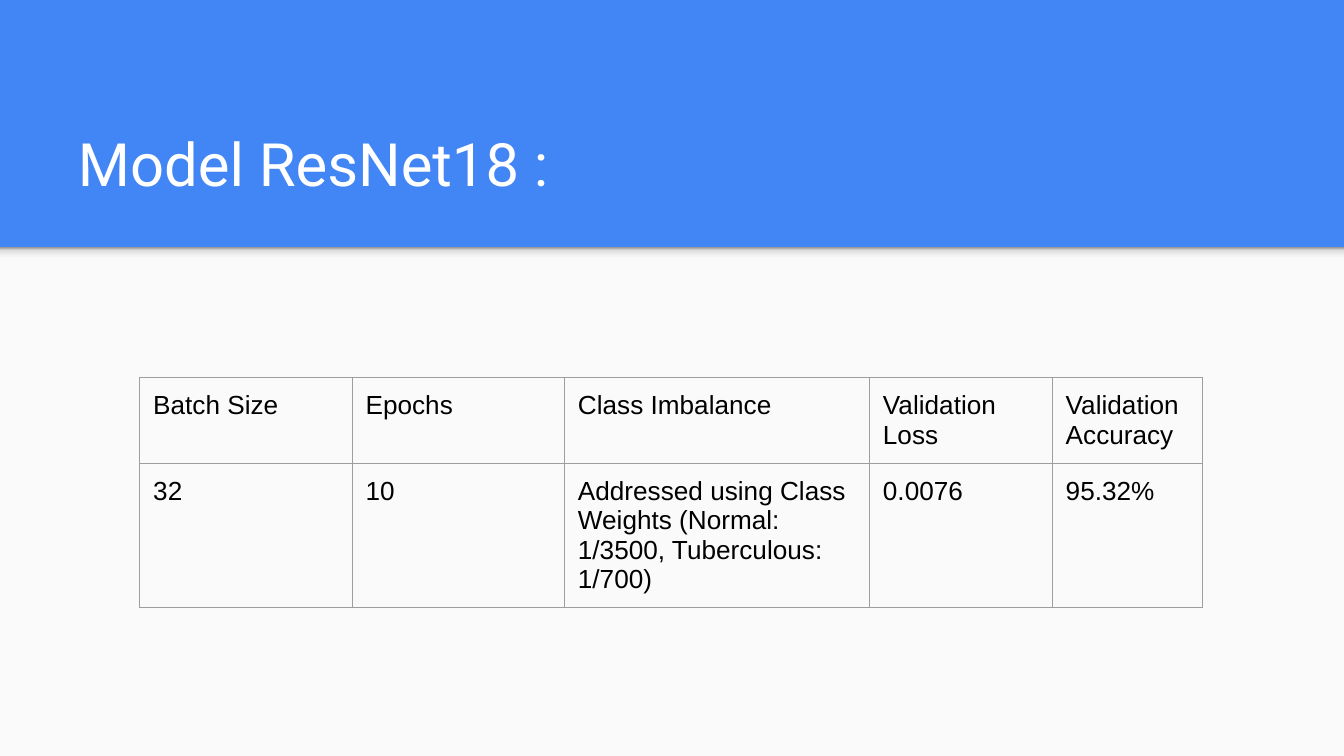
from lxml.etree import SubElement
from pptx import Presentation
from pptx.dml.color import RGBColor
from pptx.enum.shapes import MSO_SHAPE
from pptx.enum.text import MSO_ANCHOR, MSO_AUTO_SIZE, PP_ALIGN
from pptx.oxml.ns import qn
from pptx.util import Inches, Pt

WIDTH = 10
HEIGHT = WIDTH * 9 / 16
HEADER_HEIGHT = 1.84
INSET = Inches(0.1)
COLORS = {
    "header": "4285F4",
    "body": "FAFAFA",
    "title": "FFFFFF",
    "text": "000000",
    "border": "9E9E9E",
}
SHADOW_STOPS = [(0, "F9F9F9"), (36, "F9F9F9"), (80, "DEDEDE"), (100, "999999")]
COLUMN_WIDTHS = [1.58, 1.58, 2.27, 1.36, 1.12]
ROW_HEIGHT = 0.42
RESULTS = [
    ["Batch Size", "Epochs", "Class Imbalance", "Validation Loss", "Validation Accuracy"],
    ["32", "10", "Addressed using Class Weights (Normal: 1/3500, Tuberculous: 1/700)",
     "0.0076", "95.32%"],
]


def rgb(name):
    return RGBColor.from_string(COLORS[name])


def add_run(para, text, font, size, color):
    span = para.add_run()
    span.text = text
    span.font.name = font
    span.font.size = Pt(size)
    span.font.color.rgb = rgb(color)


def set_insets(item):
    item.margin_left = item.margin_right = INSET
    item.margin_top = item.margin_bottom = INSET


def add_band(page, top, height):
    """Add a full-width rectangle without outline or shadow."""
    band = page.shapes.add_shape(
        MSO_SHAPE.RECTANGLE, 0, Inches(top), Inches(WIDTH), Inches(height))
    band.shadow.inherit = False
    band.line.fill.background()
    return band


def fill_upward_gradient(band, stops):
    band.fill.gradient()
    band.fill.gradient_angle = 90
    stop_list = band.element.spPr.find(qn("a:gradFill")).find(qn("a:gsLst"))
    for old_stop in list(stop_list):
        stop_list.remove(old_stop)
    for percent, color in stops:
        stop = SubElement(stop_list, qn("a:gs"), pos=str(percent * 1000))
        SubElement(stop, qn("a:srgbClr"), val=color)


def set_title(page, text):
    title = page.shapes.title
    title.left, title.top = Inches(0.37), Inches(0.74)
    title.width, title.height = Inches(8.99), Inches(0.84)
    frame = title.text_frame
    frame.word_wrap = True
    frame.auto_size = MSO_AUTO_SIZE.NONE
    frame.vertical_anchor = MSO_ANCHOR.BOTTOM
    set_insets(frame)
    para = frame.paragraphs[0]
    para.alignment = PP_ALIGN.LEFT
    add_run(para, text, "Roboto", 32, "title")


def set_borders(cell):
    properties = cell._tc.get_or_add_tcPr()
    for side in ("lnL", "lnR", "lnT", "lnB"):
        line = SubElement(properties, qn(f"a:{side}"), w=str(Pt(0.75)))
        fill = SubElement(line, qn("a:solidFill"))
        SubElement(fill, qn("a:srgbClr"), val=COLORS["border"])


def add_results_table(page, left, top):
    table = page.shapes.add_table(
        len(RESULTS), len(COLUMN_WIDTHS), Inches(left), Inches(top),
        Inches(sum(COLUMN_WIDTHS)), Inches(ROW_HEIGHT * len(RESULTS))).table
    table.first_row = table.horz_banding = False
    for column, width in zip(table.columns, COLUMN_WIDTHS):
        column.width = Inches(width)
    for row, values in zip(table.rows, RESULTS):
        row.height = Inches(ROW_HEIGHT)
        for cell, value in zip(row.cells, values):
            set_borders(cell)
            cell.fill.background()
            set_insets(cell)
            add_run(cell.text_frame.paragraphs[0], value, "Arial", 14, "text")


def main():
    deck = Presentation()
    deck.slide_width, deck.slide_height = Inches(WIDTH), Inches(HEIGHT)
    page = deck.slides.add_slide(deck.slide_layouts[5])

    # Blue header, light body and the shadow between them
    page.background.fill.solid()
    page.background.fill.fore_color.rgb = rgb("header")
    body = add_band(page, HEADER_HEIGHT, HEIGHT - HEADER_HEIGHT)
    body.fill.solid()
    body.fill.fore_color.rgb = rgb("body")
    shadow = add_band(page, HEADER_HEIGHT, 0.12)
    fill_upward_gradient(shadow, SHADOW_STOPS)

    # Title and model results
    set_title(page, " Model ResNet18 :")
    add_results_table(page, 1.04, 2.81)

    deck.save("out.pptx")


if __name__ == "__main__":
    main()
